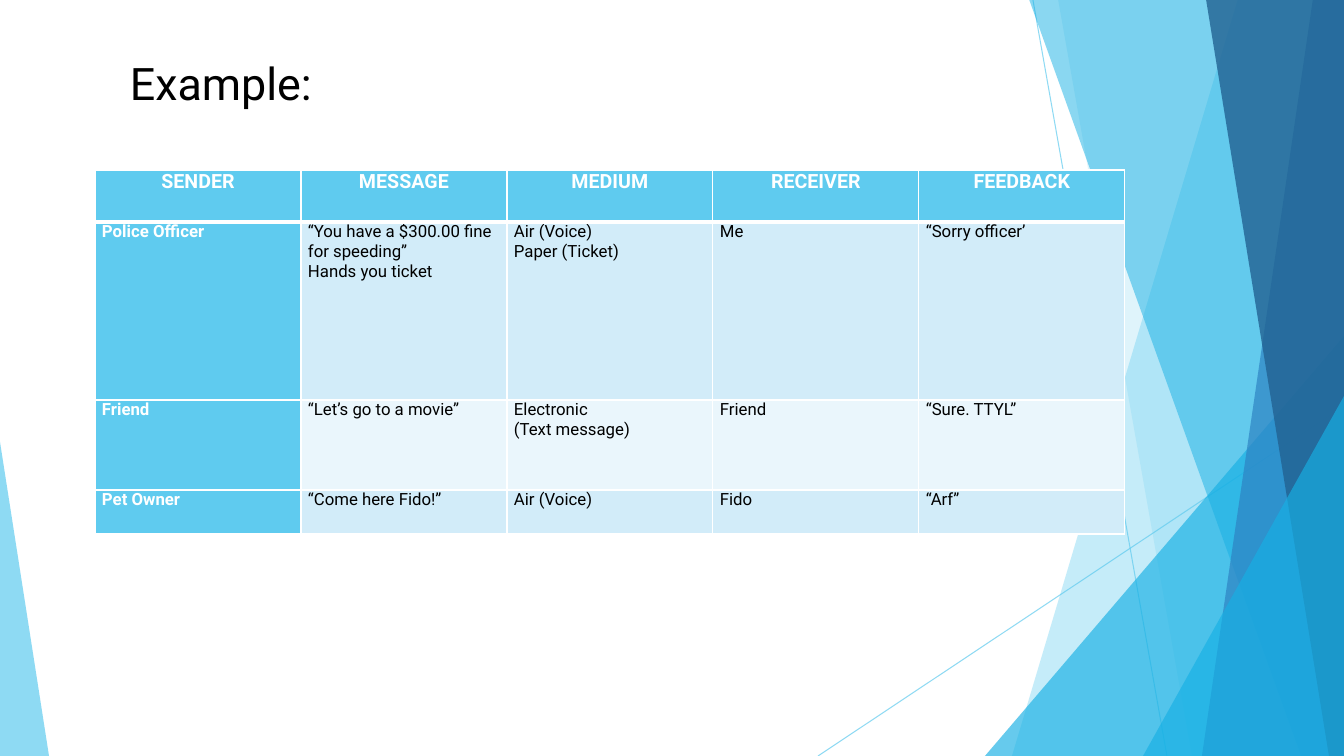
from lxml import etree
from pptx import Presentation
from pptx import util as u
from pptx.dml.color import RGBColor
from pptx.enum import shapes, text
from pptx.oxml import parse_xml
from pptx.oxml.ns import nsdecls, qn

PX = 914400 / 100.8
WIDTH, HEIGHT = 1344, 756
SKY, CYAN, WHITE, BLACK = "5FCBEF", "17B0E4", "FFFFFF", "000000"


def paint(fill, color, opacity=100):
    """Make a fill solid, with its opacity in percent."""
    fill.solid()
    fill.fore_color.rgb = RGBColor.from_string(color)
    if opacity < 100:
        for node in fill._xPr.iter(qn("a:srgbClr")):
            etree.SubElement(node, qn("a:alpha"), val=str(opacity * 1000))


def write(frame, content, align, **font):
    """Fill a text frame, one paragraph for each line of content."""
    frame.word_wrap = True
    for number, line in enumerate(content.split("\n")):
        para = frame.paragraphs[0] if number == 0 else frame.add_paragraph()
        para.alignment = align
        span = para.add_run()
        span.text = line
        paint(span.font.fill, font["color"])
        for name in ("name", "size", "bold"):
            setattr(span.font, name, font[name])


deck = Presentation()
deck.slide_width, deck.slide_height = round(WIDTH * PX), round(HEIGHT * PX)
page = deck.slides.add_slide(deck.slide_layouts[6])

# Thin rays behind the facets
for ends in [(1033, 0, 1167, HEIGHT), (WIDTH, 406, 818, HEIGHT)]:
    ray = page.shapes.add_connector(
        shapes.MSO_CONNECTOR.STRAIGHT, *(round(end * PX) for end in ends))
    ray.line.width = u.Pt(0.75)
    paint(ray.line.fill, SKY, 70)
    etree.SubElement(ray._element.spPr, qn("a:effectLst"))

# Bands: top-left x, bottom-left x; each one reaches the right edge.
# Triangles: left, top, width, height, apex.
facets = [
    ((1238, 1012), SKY, 36),
    ((1058, 1192), SKY, 20),
    ((985, 336, 359, 420, 1), CYAN, 66),
    ((1029, 1301), CYAN, 50),
    ((1313, 1202), "2E83C3", 70),
    ((1206, 1329), "226292", 80),
    ((1143, 396, 201, 360, 1), CYAN, 66),
    ((0, 442, 49, 314, 0), SKY, 70),
]
for geometry, color, opacity in facets:
    if len(geometry) == 2:
        upper, lower = geometry
        outline = page.shapes.build_freeform(upper, -1, scale=PX)
        outline.add_line_segments([(WIDTH, -1), (WIDTH, HEIGHT), (lower, HEIGHT)])
        facet = outline.convert_to_shape()
    else:
        *bounds, apex = geometry
        facet = page.shapes.add_shape(
            shapes.MSO_SHAPE.ISOSCELES_TRIANGLE, *(round(side * PX) for side in bounds))
        facet.adjustments[0] = apex
    facet.shadow.inherit = False
    facet.line.fill.background()
    paint(facet.fill, color, opacity)

# Communication table
rows = [
    ["SENDER", "MESSAGE", "MEDIUM", "RECEIVER", "FEEDBACK"],
    ["Police Officer", "“You have a $300.00 fine for speeding”\nHands you ticket",
     "Air (Voice)\nPaper (Ticket)", "Me", "“Sorry officer’"],
    ["Friend", "“Let’s go to a movie”", "Electronic\n(Text message)", "Friend", "“Sure. TTYL”"],
    ["Pet Owner", "“Come here Fido!”", "Air (Voice)", "Fido", "“Arf”"],
]
row_heights = [52, 178, 90, 44]
column_width = 206
bounds = (95, 170, column_width * len(rows[0]), sum(row_heights))
table = page.shapes.add_table(
    len(rows), len(rows[0]), *(round(side * PX) for side in bounds)).table
for column in table.columns:
    column.width = round(column_width * PX)
for r, (labels, height) in enumerate(zip(rows, row_heights)):
    table.rows[r].height = round(height * PX)
    for c, label in enumerate(labels):
        cell = table.cell(r, c)
        heading = r == 0 or c == 0
        for side in ("left", "right", "top", "bottom"):
            margin = round(7 * PX) if side in ("left", "right") else 0
            setattr(cell, f"margin_{side}", margin)
        paint(cell.fill, SKY if heading else "D2ECF9" if r % 2 else "EAF6FC")
        write(cell.text_frame, label,
              text.PP_ALIGN.CENTER if r == 0 else text.PP_ALIGN.LEFT,
              name="Roboto", size=u.Pt(14 if r == 0 else 12), bold=heading,
              color=WHITE if heading else BLACK)
        borders = {"L": 1, "R": 1, "T": 3 if r == 1 else 1, "B": 3 if r == 0 else 1}
        for position, (edge, points) in enumerate(borders.items()):
            cell._tc.get_or_add_tcPr().insert(position, parse_xml(
                f'<a:ln{edge} {nsdecls("a")} w="{u.Pt(points)}"><a:solidFill>'
                f'<a:srgbClr val="{WHITE}"/></a:solidFill></a:ln{edge}>'))

title = page.shapes.add_textbox(*(round(side * PX) for side in (120, 51, 387, 65)))
write(title.text_frame, "Example:", text.PP_ALIGN.LEFT,
      name="Roboto", size=u.Pt(32), bold=False, color=BLACK)

deck.save("out.pptx")
